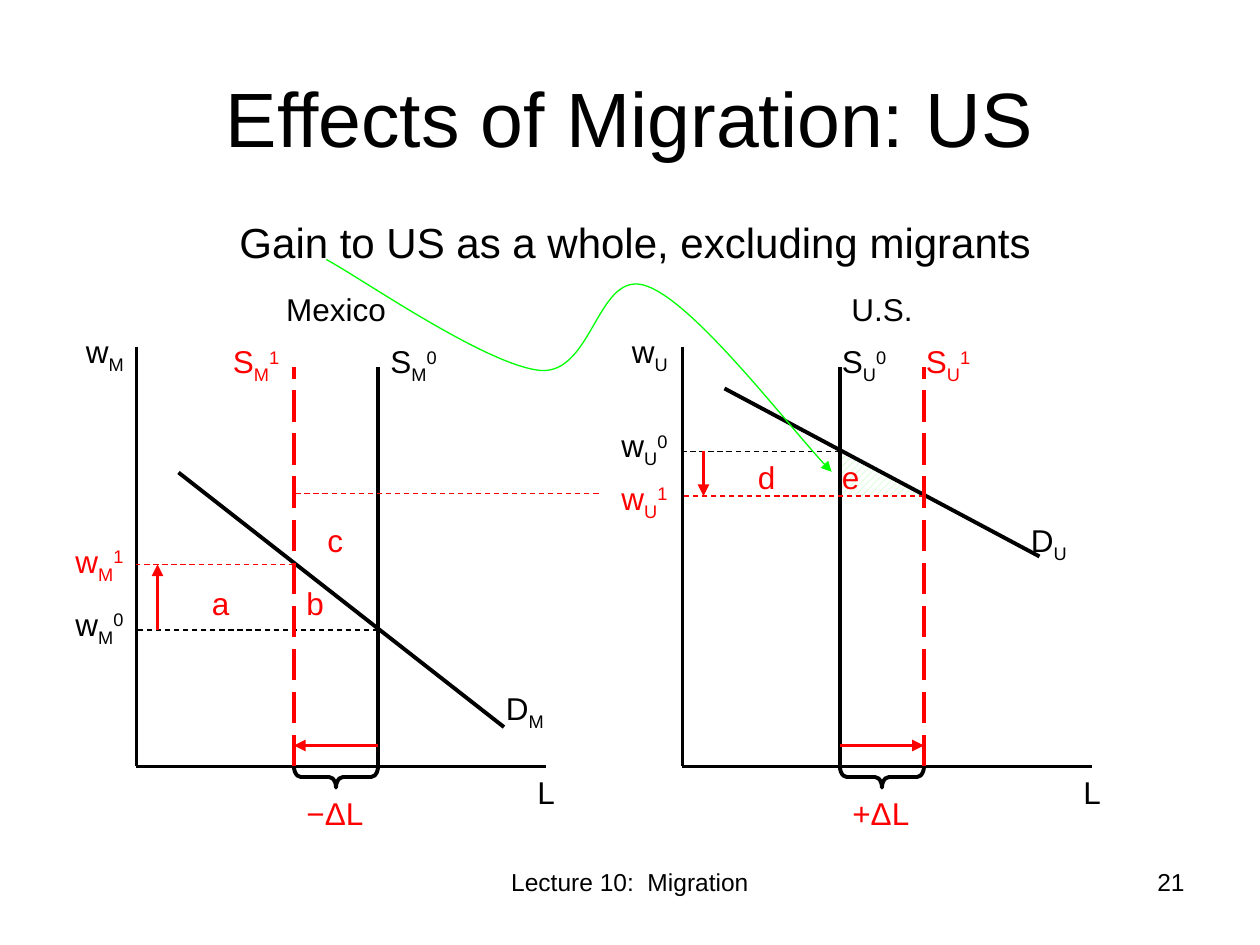
from lxml import etree
from pptx import Presentation
from pptx.dml.color import RGBColor
from pptx.enum import dml, shapes, text
from pptx.oxml.ns import qn
from pptx.util import Pt

BLACK, RED, GREEN = "000000", "FF0000", "00FF00"
DASH, LONG_DASH = dml.MSO_LINE.DASH, dml.MSO_LINE.LONG_DASH
LEFT, CENTER, RIGHT = text.PP_ALIGN.LEFT, text.PP_ALIGN.CENTER, text.PP_ALIGN.RIGHT


def rgb(color):
    return RGBColor.from_string(color)


def write(tf, parts, size, color, align):
    """Fill a text frame with (base, subscript, superscript)."""
    p = tf.paragraphs[0]
    p.alignment = align
    p.font.name, p.font.size = "Arial", Pt(size)
    p.font.color.rgb = rgb(color)
    for part, baseline in zip(parts, (0, -25000, 30000)):
        r = p.add_run()
        r.text = part
        if baseline:
            r.font._element.set("baseline", str(baseline))


def add_label(slide, x, y, w, *parts, h=28.5, size=18, color=BLACK, align=LEFT):
    tf = slide.shapes.add_textbox(Pt(x), Pt(y), Pt(w), Pt(h)).text_frame
    tf.word_wrap = True
    write(tf, parts, size, color, align)


def style_line(sp, color, width, dash=None, arrow=False):
    sp.line.color.rgb = rgb(color)
    sp.line.width = Pt(width)
    if dash:
        sp.line.dash_style = dash
    if arrow:
        etree.SubElement(sp.line._get_or_add_ln(), qn("a:tailEnd"), type="triangle")


def add_line(slide, x1, y1, x2, y2, color=BLACK, width=2.25, dash=None, arrow=False):
    line = slide.shapes.add_connector(
        shapes.MSO_CONNECTOR.STRAIGHT, Pt(x1), Pt(y1), Pt(x2), Pt(y2))
    style_line(line, color, width, dash, arrow)
    etree.SubElement(line._element.spPr, qn("a:effectLst"))


def add_freeform(slide, points, close):
    start, *rest = [(Pt(x), Pt(y)) for x, y in points]
    builder = slide.shapes.build_freeform(*start)
    builder.add_line_segments(rest, close=close)
    sp = builder.convert_to_shape()
    sp.shadow.inherit = False
    return sp


def add_hatched_gain(slide, points):
    sp = add_freeform(slide, points, close=True)
    sp.fill.patterned()
    sp.fill.pattern = dml.MSO_PATTERN.WIDE_UPWARD_DIAGONAL
    sp.fill.fore_color.rgb = rgb("99FF99")
    sp.fill.back_color.rgb = rgb("FFFFFF")
    sp.line.fill.background()


def add_curved_arrow(slide, points):
    """Draw a Bezier curve; after the start, each three points make one segment."""
    sp = add_freeform(slide, points, close=False)
    sp.fill.background()
    style_line(sp, GREEN, 0.75, arrow=True)
    segments = list(sp._element.iter(qn("a:lnTo")))
    path = segments[0].getparent()
    for i in range(0, len(segments), 3):
        curve = etree.SubElement(path, qn("a:cubicBezTo"))
        for segment in segments[i:i + 3]:
            curve.append(segment[0])
            path.remove(segment)


def add_brace(slide, x, y, w, h):
    """Place a brace that opens upward in the box x, y, w, h."""
    sp = slide.shapes.add_shape(
        shapes.MSO_SHAPE.LEFT_BRACE,
        Pt(x + (w - h) / 2), Pt(y + (h - w) / 2), Pt(h), Pt(w))
    sp.rotation = 270
    sp.adjustments[0] = 0.33
    sp.shadow.inherit = False
    sp.fill.background()
    style_line(sp, BLACK, 2.25)


def add_market(slide, x, y, w, h, country, sub, supply, wages, demand,
               demand_label, supply_labels, wage_labels, change, areas):
    """Draw a labour market; x, y, w, h is the box its axes span.

    supply and wages hold the values before and after migration.
    """
    add_line(slide, x, y, x, y + h)
    add_line(slide, x, y + h, x + w, y + h)
    add_label(slide, x + 54, y - 36, 120, country, align=CENTER)
    add_label(slide, x - 36, y - 12, 54, "w", sub)
    add_label(slide, x + w - 12, y + h, 36, "L")

    x1, y1, x2, y2 = demand
    add_line(slide, x + x1, y + y1, x + x2, y + y2)
    add_label(slide, x + demand_label[0], y + demand_label[1], 48, "D", sub)

    states = zip("01", (BLACK, RED), (None, LONG_DASH),
                 supply, wages, supply_labels, wage_labels)
    for sup, color, dash, s, wage, s_label, w_label in states:
        add_line(slide, x + s, y + h, x + s, y + 12, color, dash=dash)
        add_line(slide, x + s, y + wage, x, y + wage, color, 0.75, DASH)
        add_label(slide, x + s_label, y - 6, 48, "S", sub, sup, color=color)
        add_label(slide, x - 42, y + w_label, 57, "w", sub, sup, color=color)

    before, after = supply
    add_line(slide, x + before, y + h - 12, x + after, y + h - 12, RED, arrow=True)
    add_line(slide, x + 12, y + wages[0], x + 12, y + wages[1], RED, arrow=True)
    add_brace(slide, x + min(supply), y + h, abs(after - before), 12)
    add_label(slide, x + min(supply), y + h + 12, 48, change, color=RED)
    for name, dx, dy in areas:
        add_label(slide, x + dx, y + dy, 36, name, color=RED)


def add_title(slide, x, y, w, h, title):
    sp = slide.shapes.title
    sp.left, sp.top, sp.width, sp.height = Pt(x), Pt(y), Pt(w), Pt(h)
    sp.text_frame.vertical_anchor = text.MSO_ANCHOR.MIDDLE
    write(sp.text_frame, [title], 44, BLACK, CENTER)


def add_footer(slide, y, footer, number):
    add_label(slide, 246, y, 228, footer, h=37.5, size=14, align=CENTER)
    add_label(slide, 516, y, 168, number, h=37.5, size=14, align=RIGHT)


def main():
    prs = Presentation()
    prs.slide_width, prs.slide_height = Pt(720), Pt(540)
    slide = prs.slides.add_slide(prs.slide_layouts[5])

    add_hatched_gain(slide, [(480, 255.6), (528.5, 283), (480, 283.6)])
    add_title(slide, 36, 21.6, 648, 90, "Effects of Migration: US")
    add_footer(slide, 492, "Lecture 10:  Migration", "21")
    add_market(slide, 78, 198, 234, 240, "Mexico", "M",
               supply=(138, 90), wages=(162, 124.5),
               demand=(24, 72, 210, 217.5), demand_label=(204, 192),
               supply_labels=(138, 48), wage_labels=(144, 108), change="−ΔL",
               areas=[("a", 36, 132), ("b", 90, 132), ("c", 102, 96)])
    add_market(slide, 390, 198, 234, 240, "U.S.", "U",
               supply=(90, 138), wages=(60, 85.5),
               demand=(24, 24, 204, 120), demand_label=(192, 96),
               supply_labels=(84, 132), wage_labels=(42, 72), change="+ΔL",
               areas=[("d", 36, 60), ("e", 84, 60)])
    add_line(slide, 342, 282, 168, 282, RED, 0.75, DASH)
    add_label(slide, 108, 120, 510, "Gain to US as a whole, excluding migrants",
              h=36, size=24, align=CENTER)
    add_curved_arrow(slide, [
        (186.5, 148.3), (206.6, 159.1), (277.9, 208.8), (308.9, 211.7),
        (339.1, 213.8), (341.3, 153.4), (369.4, 163.4),
        (396.7, 172.8), (453.6, 247.7), (475.2, 269.6)])
    prs.save("out.pptx")


if __name__ == "__main__":
    main()
